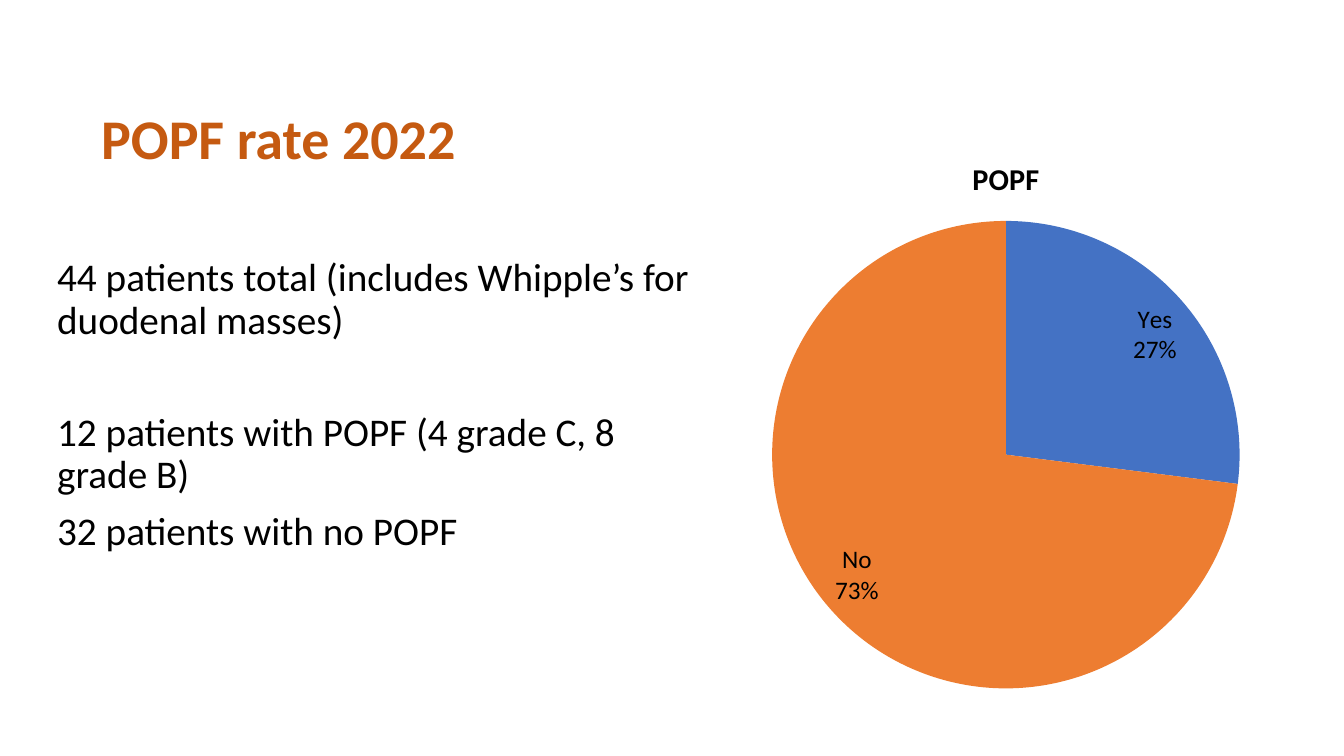
from dataclasses import dataclass

import pptx
import pptx.chart.data
import pptx.dml.color
import pptx.enum.chart
import pptx.enum.text
import pptx.oxml
import pptx.oxml.ns
import pptx.util

EMU_PER_PX = 9525
FONT = "Calibri"
COLOURS = {"heading": "C55A11", "text": "000000", "Yes": "4472C4", "No": "ED7D31"}
POPF_PERCENT = {"Yes": 27, "No": 73}


@dataclass
class Paragraph:
    text: str
    space_before: int = 0


@dataclass
class TextBlock:
    box: tuple[int, int, int, int]
    paragraphs: list[Paragraph]
    size: int
    colour: str
    bold: bool = False


TEXT_BLOCKS = [
    TextBlock((87, 101, 1104, 300), [Paragraph("POPF rate 2022")], 40, "heading", True),
    TextBlock(
        (45, 241, 621, 431),
        [
            Paragraph("44 patients total (includes Whipple’s for duodenal masses)"),
            Paragraph("12 patients with POPF (4 grade C, 8 grade B)", 50),
            Paragraph("32 patients with no POPF", 10),
        ],
        28,
        "text",
    ),
]


def px(*lengths: int) -> list[pptx.util.Emu]:
    return [pptx.util.Emu(length * EMU_PER_PX) for length in lengths]


def rgb(name: str) -> pptx.dml.color.RGBColor:
    return pptx.dml.color.RGBColor.from_string(COLOURS[name])


def style_font(font, size: float, colour: str, bold: bool = False) -> None:
    values = {"name": FONT, "size": pptx.util.Pt(size), "bold": bold}
    for attribute, value in values.items():
        setattr(font, attribute, value)
    font.color.rgb = rgb(colour)


def draw_text(slide, block: TextBlock) -> None:
    frame = slide.shapes.add_textbox(*px(*block.box)).text_frame
    frame.word_wrap = True
    frame.vertical_anchor = pptx.enum.text.MSO_ANCHOR.TOP
    for index, item in enumerate(block.paragraphs):
        paragraph = frame.add_paragraph() if index else frame.paragraphs[0]
        paragraph.line_spacing = 0.9
        if item.space_before:
            paragraph.space_before = pptx.util.Pt(item.space_before)
        run = paragraph.add_run()
        run.text = item.text
        style_font(run.font, block.size, block.colour, block.bold)


def draw_popf_chart(slide) -> None:
    popf = pptx.chart.data.CategoryChartData()
    popf.categories = list(POPF_PERCENT)
    popf.add_series("POPF", list(POPF_PERCENT.values()))
    chart = slide.shapes.add_chart(
        pptx.enum.chart.XL_CHART_TYPE.PIE, *px(684, 129, 548, 543), popf
    ).chart
    chart.has_legend = False
    style_font(chart.font, 18, "text")

    # Chart title
    chart.has_title = True
    chart.chart_title.include_in_layout = False
    heading = chart.chart_title.text_frame.paragraphs[0].add_run()
    heading.text = "POPF"
    style_font(heading.font, 21.6, "text", True)

    # Slices
    pie = chart.plots[0]
    pie.vary_by_categories = True
    for index, answer in enumerate(POPF_PERCENT):
        slice_format = pie.series[0].points[index].format
        slice_format.fill.solid()
        slice_format.fill.fore_color.rgb = rgb(answer)
        slice_format.line.fill.background()

    # Slice labels
    pie.has_data_labels = True
    labels = pie.data_labels
    label_values = {
        "show_value": False,
        "show_percentage": True,
        "show_category_name": True,
        "number_format": "0%",
        "number_format_is_linked": False,
        "position": pptx.enum.chart.XL_LABEL_POSITION.INSIDE_END,
    }
    for attribute, value in label_values.items():
        setattr(labels, attribute, value)
    style_font(labels.font, 18, "text")

    # Pie position inside the chart, as fractions of its size
    parts = {"layoutTarget": "inner", "xMode": "edge", "yMode": "edge",
             "x": 0.09, "y": 0.15, "w": 0.82, "h": 0.82}
    settings = "".join(f'<c:{tag} val="{value}"/>' for tag, value in parts.items())
    layout = pptx.oxml.parse_xml(
        f'<c:layout {pptx.oxml.ns.nsdecls("c")}>'
        f"<c:manualLayout>{settings}</c:manualLayout></c:layout>"
    )
    plot_area = chart.element.chart.plotArea
    for automatic in plot_area.findall(pptx.oxml.ns.qn("c:layout")):
        plot_area.remove(automatic)
    plot_area.insert(0, layout)


def main() -> None:
    presentation = pptx.Presentation()
    presentation.slide_width, presentation.slide_height = px(1280, 720)
    slide = presentation.slides.add_slide(presentation.slide_layouts[6])
    for block in TEXT_BLOCKS:
        draw_text(slide, block)
    draw_popf_chart(slide)
    presentation.save("out.pptx")


if __name__ == "__main__":
    main()
